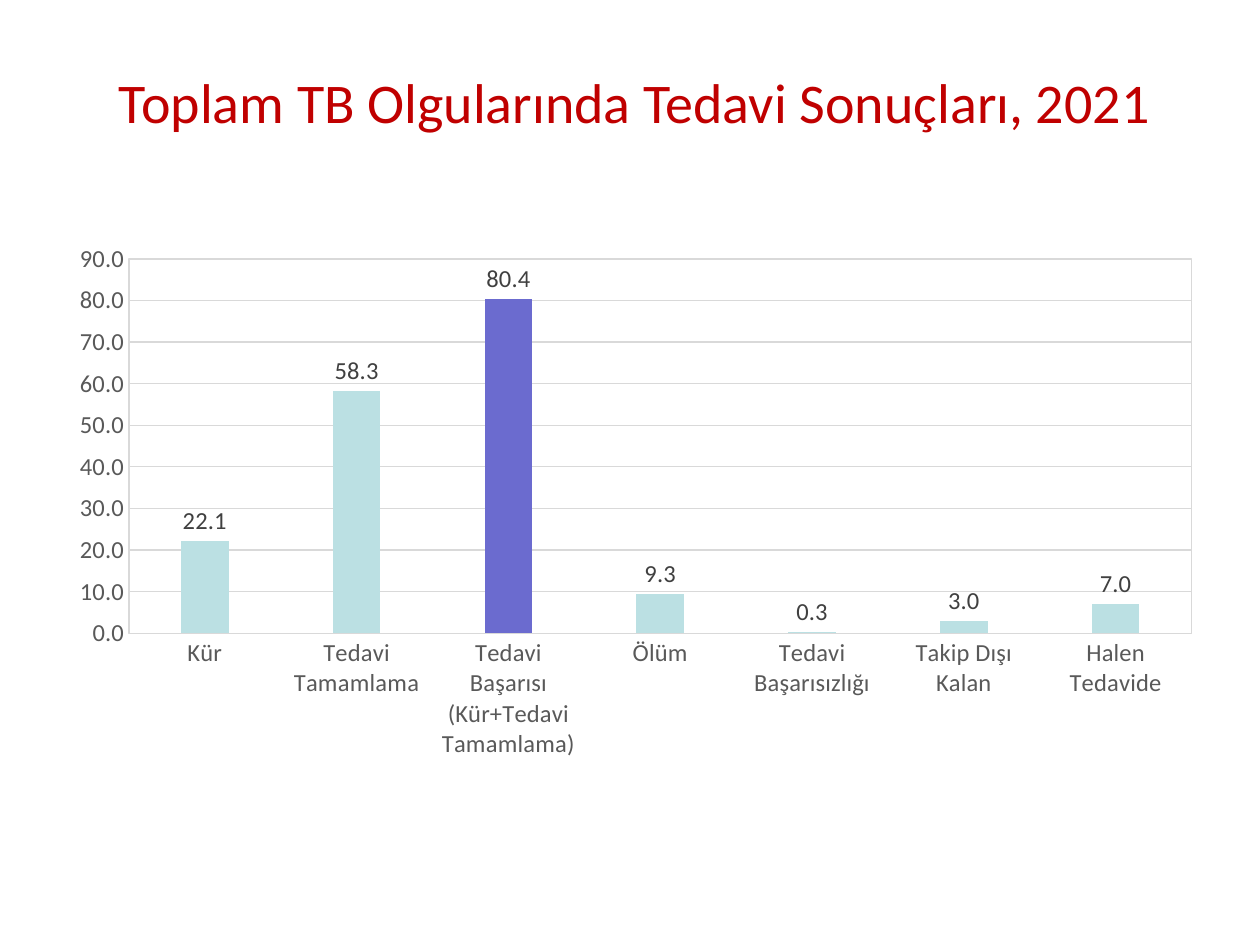
import pptx
import pptx.chart.data
import pptx.dml.color
import pptx.enum.chart
import pptx.enum.text
import pptx.oxml
import pptx.oxml.ns
import pptx.util
from pptx.util import Inches

RED = pptx.dml.color.RGBColor(0xC0, 0x00, 0x00)
PALE_TEAL = pptx.dml.color.RGBColor(0xBB, 0xE0, 0xE3)
VIOLET = pptx.dml.color.RGBColor(0x6B, 0x6B, 0xCF)
LIGHT_GRAY = pptx.dml.color.RGBColor(0xD9, 0xD9, 0xD9)
AXIS_GRAY = pptx.dml.color.RGBColor(0x59, 0x59, 0x59)
LABEL_GRAY = pptx.dml.color.RGBColor(0x40, 0x40, 0x40)
FONT_NAME = "Calibri"
NUMBER_FORMAT = "0.0"
OUTCOMES = {
    "Kür": 22.1,
    "Tedavi Tamamlama": 58.3,
    "Tedavi Başarısı (Kür+Tedavi Tamamlama)": 80.4,
    "Ölüm": 9.3,
    "Tedavi Başarısızlığı": 0.3,
    "Takip Dışı Kalan": 3.0,
    "Halen Tedavide": 7.0,
}
SUCCESS_INDEX = 2


def style_font(font, size, color):
    font.name = FONT_NAME
    font.size = pptx.util.Pt(size)
    font.color.rgb = color


def style_line(line):
    line.color.rgb = LIGHT_GRAY
    line.width = pptx.util.Pt(0.75)


def add_title(slide, text):
    shape = slide.shapes.add_textbox(Inches(0.5), Inches(0.52), Inches(9.08), Inches(0.56))
    text_frame = shape.text_frame
    text_frame.word_wrap = True
    text_frame.vertical_anchor = pptx.enum.text.MSO_ANCHOR.MIDDLE
    text_frame.text = text
    paragraph = text_frame.paragraphs[0]
    paragraph.alignment = pptx.enum.text.PP_ALIGN.CENTER
    style_font(paragraph.runs[0].font, 32, RED)


def style_axes(chart):
    for axis in (chart.category_axis, chart.value_axis):
        axis.major_tick_mark = pptx.enum.chart.XL_TICK_MARK.NONE
        axis.minor_tick_mark = pptx.enum.chart.XL_TICK_MARK.NONE
        style_font(axis.tick_labels.font, 14, AXIS_GRAY)
    style_line(chart.category_axis.format.line)
    value_axis = chart.value_axis
    value_axis.format.line.fill.background()
    value_axis.minimum_scale = 0
    value_axis.maximum_scale = 90
    value_axis.major_unit = 10
    value_axis.tick_labels.number_format = NUMBER_FORMAT
    value_axis.tick_labels.number_format_is_linked = False
    style_line(value_axis.major_gridlines.format.line)


def style_columns(plot):
    plot.gap_width = 219
    plot.overlap = -27
    plot.vary_by_categories = False
    series = plot.series[0]
    series.format.fill.solid()
    series.format.fill.fore_color.rgb = PALE_TEAL
    success_fill = series.points[SUCCESS_INDEX].format.fill
    success_fill.solid()
    success_fill.fore_color.rgb = VIOLET
    labels = series.data_labels
    labels.show_value = True
    labels.position = pptx.enum.chart.XL_LABEL_POSITION.OUTSIDE_END
    labels.number_format = NUMBER_FORMAT
    labels.number_format_is_linked = False
    style_font(labels.font, 14, LABEL_GRAY)


def outline_plot_area(chart):
    plot_area = chart.element.find(".//" + pptx.oxml.ns.qn("c:plotArea"))
    plot_area.append(pptx.oxml.parse_xml(
        f'<c:spPr {pptx.oxml.ns.nsdecls("c", "a")}><a:noFill/><a:ln w="9525">'
        f'<a:solidFill><a:srgbClr val="{LIGHT_GRAY}"/></a:solidFill></a:ln></c:spPr>'
    ))


def add_outcome_chart(slide):
    chart_data = pptx.chart.data.CategoryChartData(number_format=NUMBER_FORMAT)
    chart_data.categories = list(OUTCOMES)
    chart_data.add_series("Series 1", list(OUTCOMES.values()))
    chart = slide.shapes.add_chart(
        pptx.enum.chart.XL_CHART_TYPE.COLUMN_CLUSTERED,
        Inches(0.45), Inches(1.85), Inches(9.19), Inches(4.26), chart_data,
    ).chart
    chart.has_legend = False
    chart.has_title = False
    chart.font.name = FONT_NAME
    chart.font.size = pptx.util.Pt(14)
    style_axes(chart)
    style_columns(chart.plots[0])
    outline_plot_area(chart)


def main():
    """Build the slide of tuberculosis treatment outcomes."""
    presentation = pptx.Presentation()
    presentation.slide_width = Inches(10)
    presentation.slide_height = Inches(7.5)
    slide = presentation.slides.add_slide(presentation.slide_layouts[6])
    add_title(slide, "Toplam TB Olgularında Tedavi Sonuçları, 2021")
    add_outcome_chart(slide)
    presentation.save("out.pptx")


if __name__ == "__main__":
    main()
